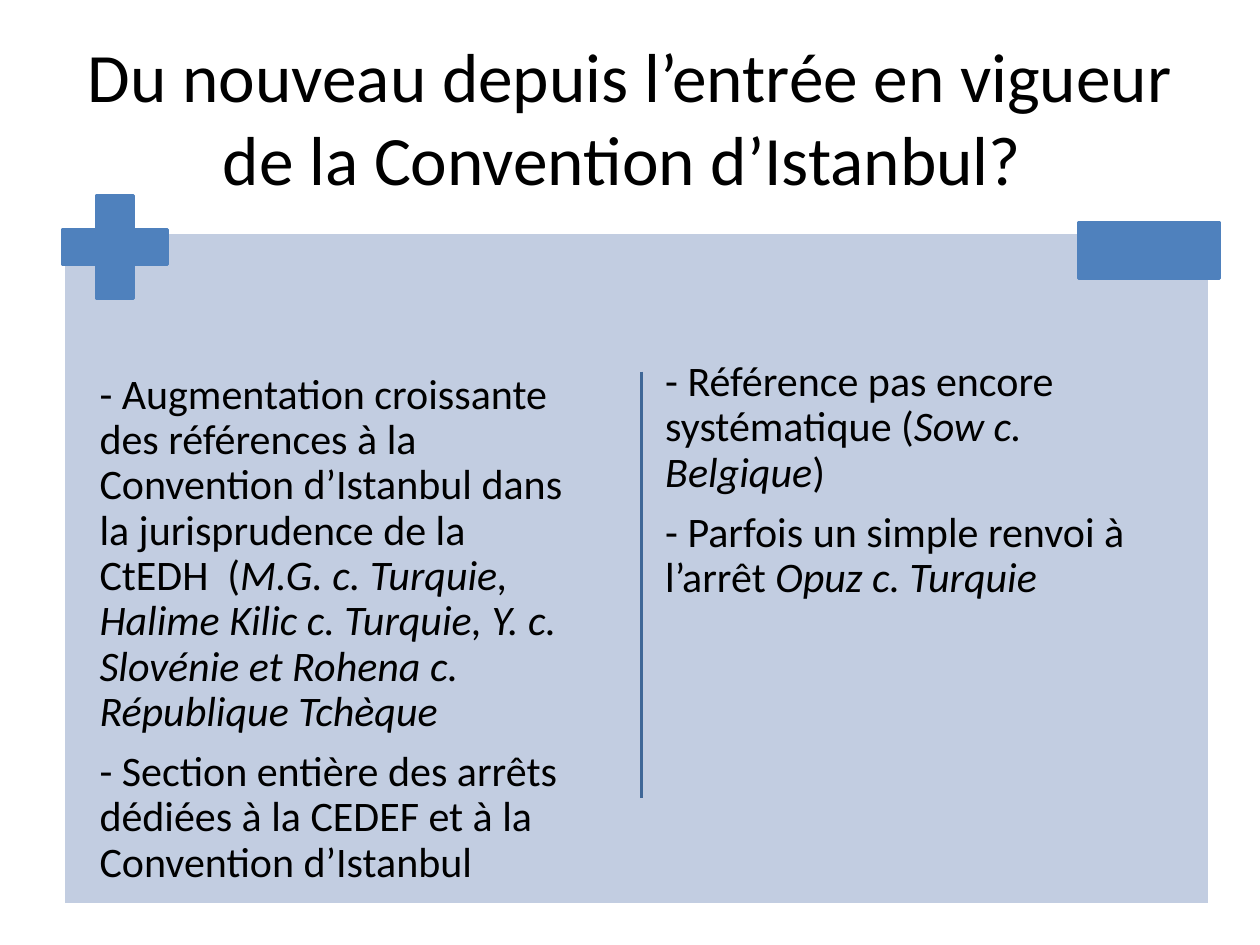
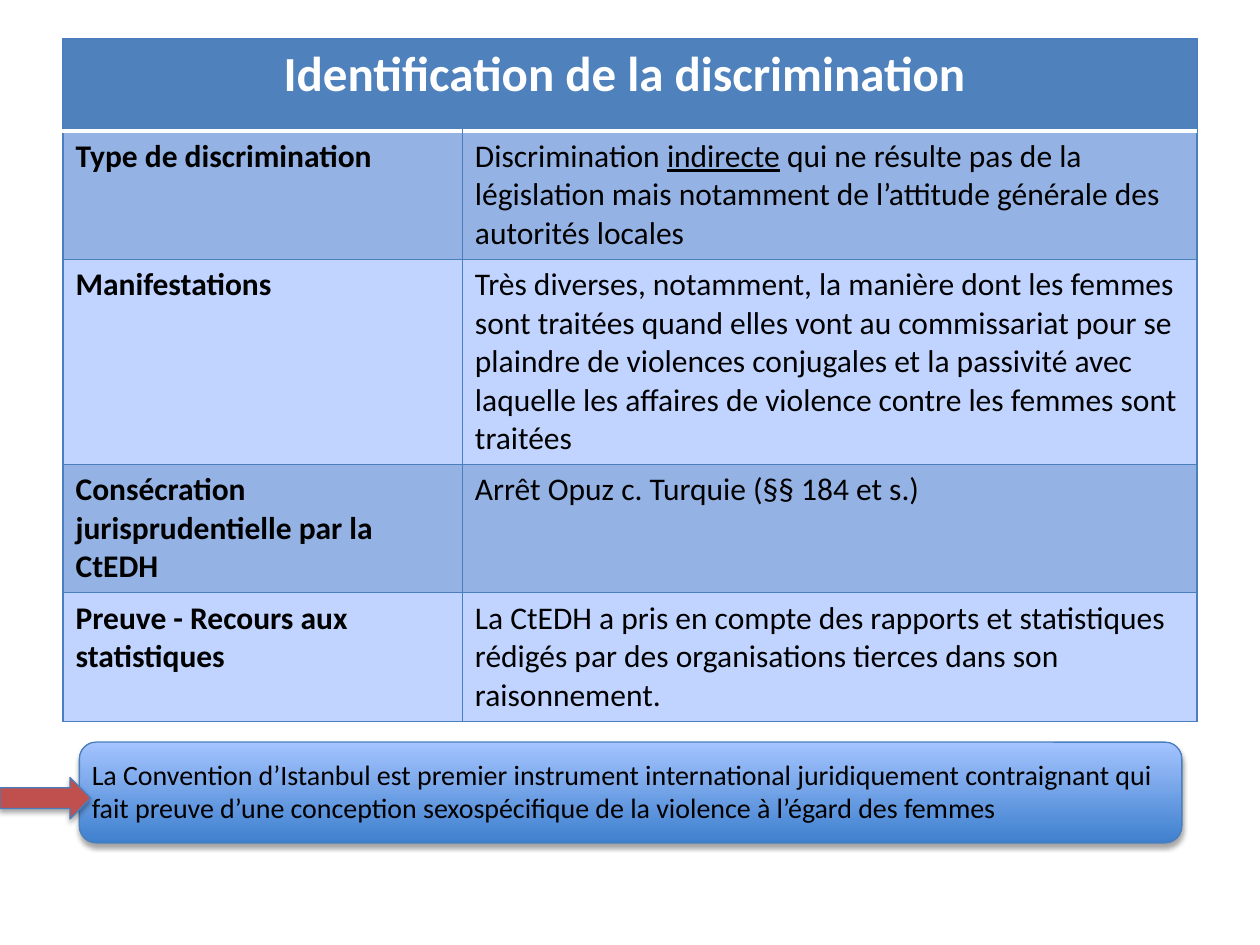
from dataclasses import dataclass, field

from lxml.etree import SubElement
from pptx import Presentation
from pptx.dml.color import RGBColor
from pptx.enum.shapes import MSO_CONNECTOR, MSO_SHAPE
from pptx.enum.text import MSO_ANCHOR, PP_ALIGN
from pptx.oxml.ns import qn
from pptx.util import Inches, Pt


@dataclass(frozen=True)
class Theme:
    font: str = "Calibri"
    black: str = "000000"
    white: str = "FFFFFF"
    blue: str = "4F81BD"
    panel: str = "C2CDE1"
    divider: str = "3F6797"
    border: str = "4B7EBC"
    dark_row: str = "94B2E4"
    light_row: str = "C0D4FF"
    gradient: tuple = ("3F80CE", "A4C4FF")
    red: str = "C0504D"
    title_size: float = 39.6
    header_size: float = 28
    body_size: float = 24
    cell_size: float = 18
    note_size: float = 16
    heavy_line: float = 2
    thin_line: float = 0.75


THEME = Theme()
ITALIC = {"italic": True}
BOLD = {"bold": True}
UNDERLINE = {"underline": True}


@dataclass(frozen=True)
class Box:
    left: float
    top: float
    width: float
    height: float

    def lengths(self):
        return [Inches(value) for value in (self.left, self.top, self.width, self.height)]


@dataclass(frozen=True)
class Piece:
    text: str
    style: dict = field(default_factory=dict)


@dataclass(frozen=True)
class Ornament:
    kind: MSO_SHAPE
    box: Box
    fill: str
    line: str
    line_width: float
    adjustments: tuple = ()
    shadow: bool = False


@dataclass(frozen=True)
class Column:
    box: Box
    paragraphs: tuple


@dataclass(frozen=True)
class Row:
    height: float
    label: str
    pieces: tuple


def rgb(value: str) -> RGBColor:
    return RGBColor.from_string(value)


def set_attributes(target, values: dict) -> None:
    for name, value in values.items():
        setattr(target, name, value)


def add_pieces(paragraph, pieces, size: float, color: str = THEME.black) -> None:
    for piece in pieces:
        run = paragraph.add_run()
        run.text = piece.text
        set_attributes(run.font, {"name": THEME.font, "size": Pt(size), **piece.style})
        run.font.color.rgb = rgb(color)


def add_text(slide, box: Box, paragraphs, size: float, frame_format=None, paragraph_format=None) -> None:
    frame = slide.shapes.add_textbox(*box.lengths()).text_frame
    set_attributes(frame, {"word_wrap": True, **(frame_format or {})})
    for index, pieces in enumerate(paragraphs):
        paragraph = frame.add_paragraph() if index else frame.paragraphs[0]
        set_attributes(paragraph, paragraph_format or {})
        add_pieces(paragraph, pieces, size)


def add_drop_shadow(shape) -> None:
    effects = shape._element.spPr.find(qn("a:effectLst"))
    shadow = SubElement(effects, qn("a:outerShdw"), blurRad=str(Pt(3.1)), dist=str(Pt(1.8)),
                        dir="5400000", rotWithShape="0")
    color = SubElement(shadow, qn("a:srgbClr"), val=THEME.black)
    SubElement(color, qn("a:alpha"), val="35000")


def add_ornament(slide, ornament: Ornament):
    shape = slide.shapes.add_shape(ornament.kind, *ornament.box.lengths())
    shape.fill.solid()
    shape.fill.fore_color.rgb = rgb(ornament.fill)
    shape.line.color.rgb = rgb(ornament.line)
    shape.line.width = Pt(ornament.line_width)
    for index, value in enumerate(ornament.adjustments):
        shape.adjustments[index] = value
    shape.shadow.inherit = False
    if ornament.shadow:
        add_drop_shadow(shape)
    return shape


def add_divider(slide, x: float, top: float, bottom: float) -> None:
    connector = slide.shapes.add_connector(
        MSO_CONNECTOR.STRAIGHT, Inches(x), Inches(top), Inches(x), Inches(bottom))
    connector.line.color.rgb = rgb(THEME.divider)
    connector.line.width = Pt(THEME.heavy_line)
    SubElement(connector._element.spPr, qn("a:effectLst"))


def set_borders(cell, **special) -> None:
    """Draw thin borders, except on the sides given as (color, width)."""
    properties = cell._tc.get_or_add_tcPr()
    for side in ("L", "R", "T", "B"):
        color, width = special.get(side, (THEME.border, THEME.thin_line))
        line = SubElement(properties, qn(f"a:ln{side}"), w=str(Pt(width)))
        SubElement(SubElement(line, qn("a:solidFill")), qn("a:srgbClr"), val=color)


def fill_cell(cell, color: str) -> None:
    cell.fill.solid()
    cell.fill.fore_color.rgb = rgb(color)


PANEL = Ornament(MSO_SHAPE.RECTANGLE, Box(0.5, 1.84, 9.1, 5.34), THEME.panel, THEME.white, THEME.heavy_line)
SIGNS = (
    Ornament(MSO_SHAPE.CROSS, Box(0.5, 1.55, 0.83, 0.82), THEME.blue, THEME.blue, THEME.heavy_line, (0.33,)),
    Ornament(MSO_SHAPE.RECTANGLE, Box(8.56, 1.77, 1.12, 0.44), THEME.blue, THEME.blue, THEME.heavy_line),
)
COLUMNS = (
    Column(Box(0.74, 2.43, 3.86, 4.36), (
        (Piece("- Augmentation croissante des références à la Convention d’Istanbul dans "
               "la jurisprudence de la CtEDH  ("),
         Piece("M.G. c. Turquie, Halime Kilic c. Turquie, Y. c. Slovénie et Rohena c. "
               "République Tchèque", ITALIC)),
        (Piece("- Section entière des arrêts dédiées à la CEDEF et à la Convention d’Istanbul"),),
    )),
    Column(Box(5.23, 2.33, 4.27, 4.54), (
        (Piece("- Référence pas encore systématique ("), Piece("Sow c. Belgique", ITALIC), Piece(")")),
        (Piece("- Parfois un simple renvoi à l’arrêt "), Piece("Opuz c. Turquie", ITALIC)),
    )),
)

COLUMN_WIDTHS = (3.17, 5.83)
HEADER_HEIGHT = 0.73
ROWS = (
    Row(1.02, "Type de discrimination", (
        Piece("Discrimination "), Piece("indirecte", UNDERLINE),
        Piece(" qui ne résulte pas de la législation mais notamment de l’attitude générale "
              "des autorités locales"))),
    Row(1.62, "Manifestations", (
        Piece("Très diverses, notamment, la manière dont les femmes sont traitées quand elles vont "
              "au commissariat pour se plaindre de violences conjugales et la passivité avec laquelle "
              "les affaires de violence contre les femmes sont traitées"),)),
    Row(1.02, "Consécration jurisprudentielle par la CtEDH", (
        Piece("Arrêt Opuz c. Turquie (§§ 184 et s.)"),)),
    Row(1.02, "Preuve - Recours aux statistiques", (
        Piece("La CtEDH a pris en compte des rapports et statistiques rédigés par des organisations "
              "tierces dans son raisonnement."),)),
)
NOTE = Ornament(MSO_SHAPE.ROUNDED_RECTANGLE, Box(0.63, 5.89, 8.75, 0.8), THEME.blue, THEME.border,
                THEME.thin_line, shadow=True)
NOTE_TEXT = ("La Convention d’Istanbul est premier instrument international juridiquement contraignant "
             "qui fait preuve d’une conception sexospécifique de la violence à l’égard des femmes")
ARROW = Ornament(MSO_SHAPE.RIGHT_ARROW, Box(0, 6.17, 0.72, 0.33), THEME.red, THEME.border,
                 THEME.thin_line, shadow=True)


def build_convention_slide(slide) -> None:
    title = Piece("Du nouveau depuis l’entrée en vigueur de la Convention d’Istanbul? ")
    add_text(slide, Box(0.5, 0.3, 9, 1.25), [[title]], THEME.title_size,
             {"vertical_anchor": MSO_ANCHOR.MIDDLE}, {"alignment": PP_ALIGN.CENTER})
    add_ornament(slide, PANEL)
    inset = Inches(0.05)
    frame_format = {"margin_left": inset, "margin_right": inset, "margin_bottom": inset,
                    "margin_top": Inches(0.53)}
    for column in COLUMNS:
        add_text(slide, column.box, column.paragraphs, THEME.body_size, frame_format,
                 {"line_spacing": 0.9, "space_after": Pt(8.4)})
    for sign in SIGNS:
        add_ornament(slide, sign)
    add_divider(slide, 5.09, 2.95, 6.33)


def add_discrimination_table(slide) -> None:
    heights = [HEADER_HEIGHT, *(row.height for row in ROWS)]
    box = Box(0.5, 0.31, sum(COLUMN_WIDTHS), sum(heights))
    table = slide.shapes.add_table(len(heights), len(COLUMN_WIDTHS), *box.lengths()).table
    set_attributes(table, {"first_row": False, "horz_banding": False})
    for column, width in zip(table.columns, COLUMN_WIDTHS):
        column.width = Inches(width)
    for table_row, height in zip(table.rows, heights):
        table_row.height = Inches(height)

    header_rule = (THEME.white, THEME.heavy_line)
    header = table.cell(0, 0)
    header.merge(table.cell(0, 1))
    for cell in table.rows[0].cells:
        set_borders(cell, B=header_rule)
        fill_cell(cell, THEME.blue)
    paragraph = header.text_frame.paragraphs[0]
    paragraph.alignment = PP_ALIGN.CENTER
    add_pieces(paragraph, [Piece("Identification de la discrimination ", BOLD)],
               THEME.header_size, THEME.white)

    for index, row in enumerate(ROWS, start=1):
        contents = ([Piece(row.label, BOLD)], row.pieces)
        for cell, pieces in zip(table.rows[index].cells, contents):
            set_borders(cell, **({"T": header_rule} if index == 1 else {}))
            fill_cell(cell, THEME.dark_row if index % 2 else THEME.light_row)
            add_pieces(cell.text_frame.paragraphs[0], pieces, THEME.cell_size)


def build_discrimination_slide(slide) -> None:
    add_discrimination_table(slide)
    note = add_ornament(slide, NOTE)
    note.fill.gradient()
    note.fill.gradient_angle = 90
    for position, (stop, color) in enumerate(zip(note.fill.gradient_stops, THEME.gradient)):
        stop.position = position
        stop.color.rgb = rgb(color)
    add_text(slide, Box(0.63, 5.96, 8.75, 0.64), [[Piece(NOTE_TEXT)]], THEME.note_size)
    add_ornament(slide, ARROW)


def main() -> None:
    presentation = Presentation()
    presentation.slide_width = Inches(10)
    presentation.slide_height = Inches(7.5)
    blank_layout = presentation.slide_layouts[6]
    for build in (build_convention_slide, build_discrimination_slide):
        build(presentation.slides.add_slide(blank_layout))
    presentation.save("out.pptx")


if __name__ == "__main__":
    main()
